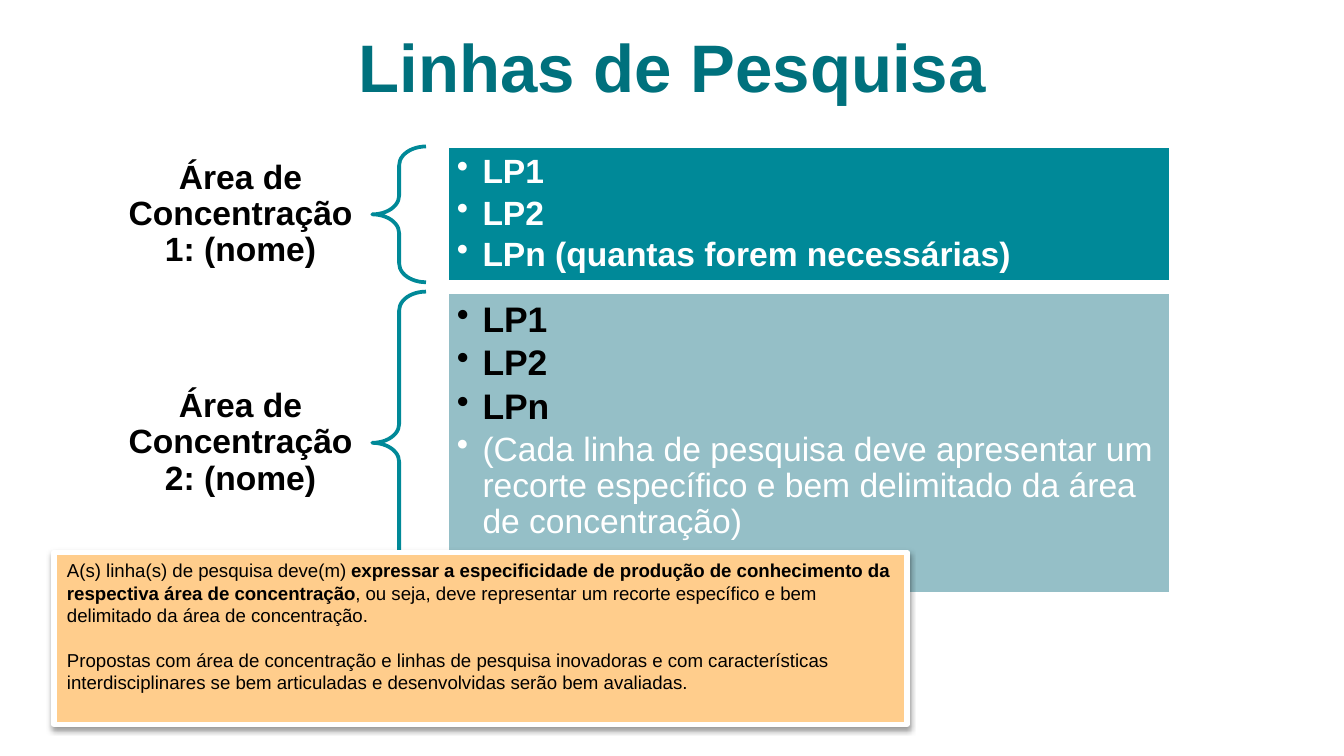
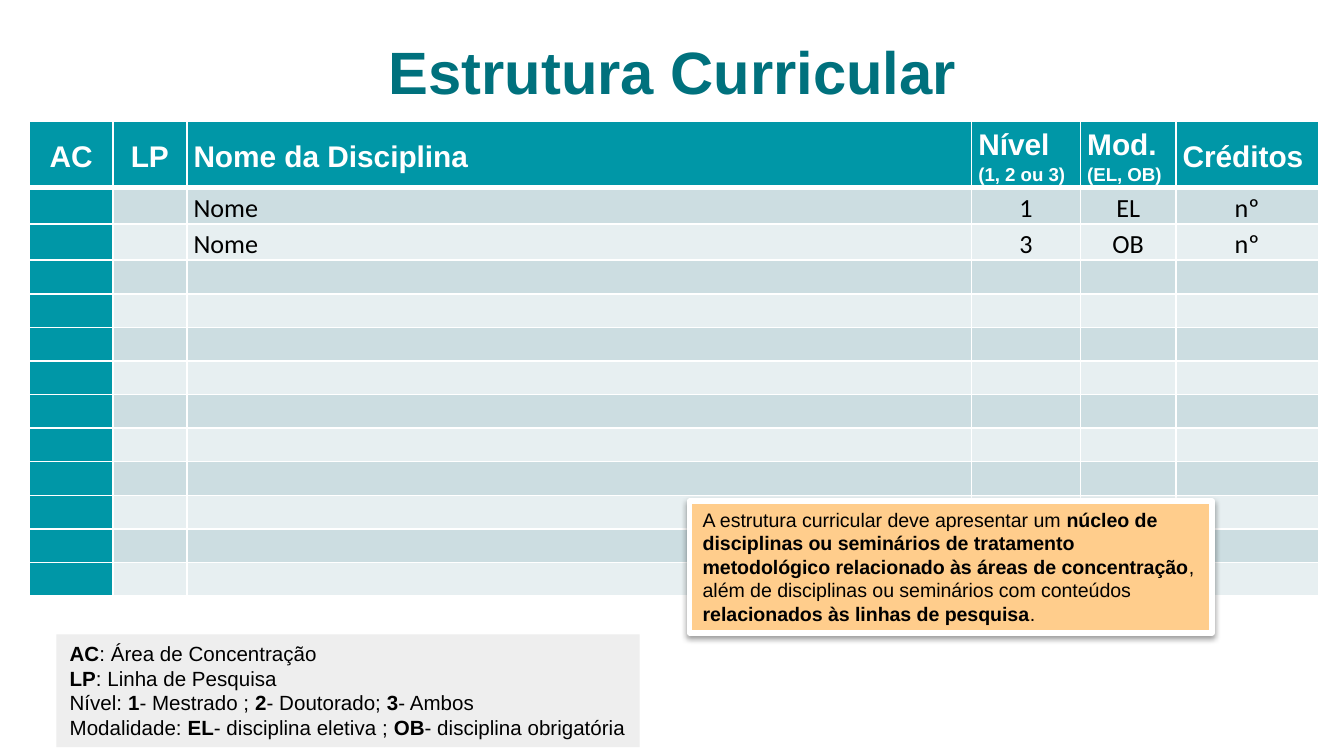
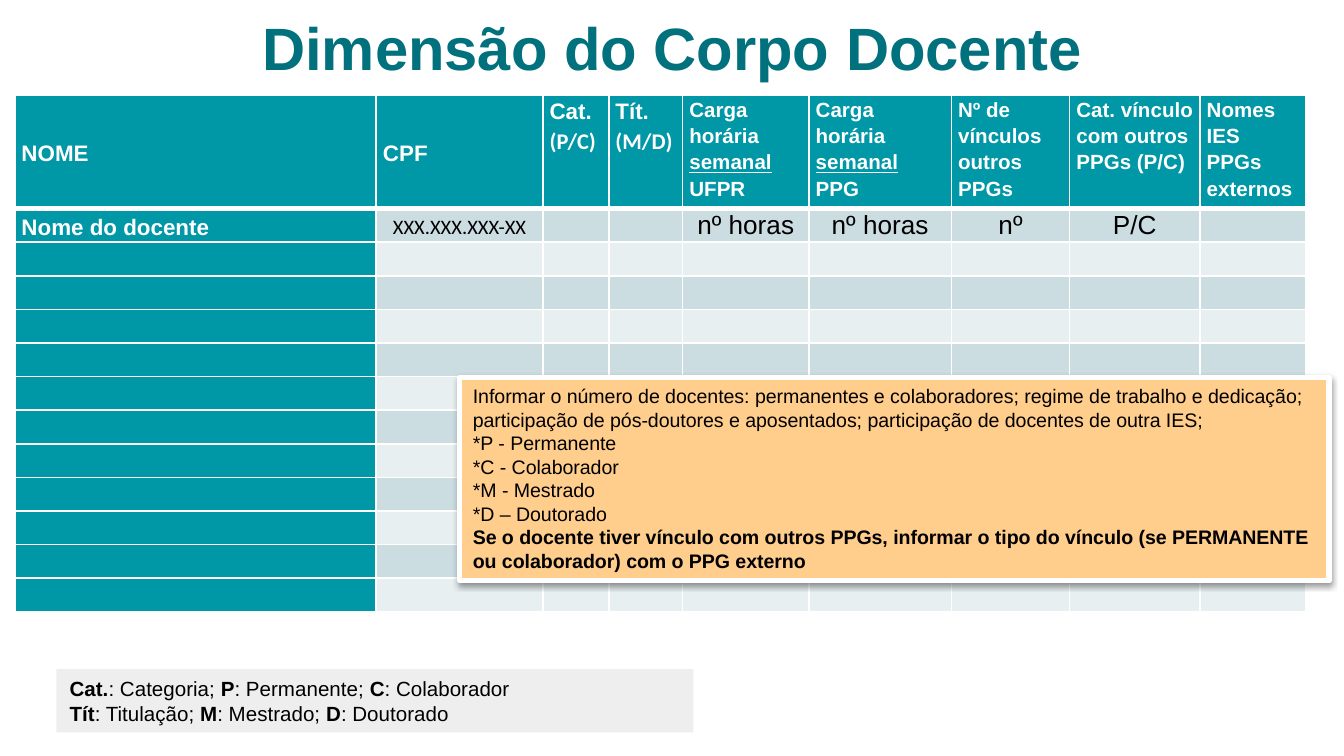
from lxml.etree import SubElement
from pptx import Presentation
from pptx.dml.color import RGBColor as RGB
from pptx.enum.shapes import MSO_SHAPE as SHAPE
from pptx.enum.text import MSO_ANCHOR as ANCHOR, PP_ALIGN as ALIGN
from pptx.oxml.ns import qn
from pptx.util import Emu, Inches, Pt

COLORS = {
    "title": "00717D", "teal": "008998", "mist": "95BFC7", "head": "0097A7",
    "band0": "CCDDE1", "band1": "E7EFF1", "note": "FFCD8C", "legend": "EEEEEE",
    "white": "FFFFFF", "black": "000000",
}
BASE = {"name": "Arial", "size": 11, "bold": False, "color": "black"}
BOLD = {"bold": True}
GRID = 100  # square grid units across the slide width
PAD = (1, 0.5, 1, 0.5)


def rgb(name):
    return RGB.from_string(COLORS[name])


class Deck:
    """Shared style and the current slide; lengths are in grid units."""

    def __init__(self):
        self.prs = Presentation()
        self.prs.slide_width, self.prs.slide_height = Inches(10), Inches(5.625)
        self.unit = self.prs.slide_width / GRID
        self.s = None

    def length(self, n):
        return Emu(round(n * self.unit))

    def box(self, at):
        return [self.length(n) for n in at]

    def slide(self):
        self.s = self.prs.slides.add_slide(self.prs.slide_layouts[6])

    # Text: pieces between bars take the emphasis format
    def fill_text(self, tf, paras, align=ALIGN.LEFT, spacing=None, after=0, gap=0,
                  bullet=False, emph=BOLD, **fmt):
        for i, para in enumerate([paras] if isinstance(paras, str) else paras):
            text, own = (para, {}) if isinstance(para, str) else para
            p = tf.paragraphs[0] if i == 0 else tf.add_paragraph()
            if bullet:
                pPr = p._p.get_or_add_pPr()
                pPr.set("marL", str(Inches(0.19)))
                pPr.set("indent", str(-Inches(0.19)))
                SubElement(pPr, qn("a:buChar")).set("char", "•")
            p.alignment, p.space_after = align, Pt(after)
            p.space_before = Pt(gap if i else 0)
            if spacing:
                p.line_spacing = spacing
            for j, piece in enumerate(text.split("|")):
                style = {**BASE, **fmt, **own, **(emph if j % 2 else {})}
                if not piece:
                    continue
                r = p.add_run()
                r.text = piece
                r.font.color.rgb = rgb(style.pop("color"))
                style["size"] = Pt(style["size"])
                for key, value in style.items():
                    setattr(r.font, key, value)

    def frame(self, tf, paras, pad=PAD, anchor=ANCHOR.TOP, **fmt):
        tf.word_wrap, tf.vertical_anchor = True, anchor
        for side, n in zip(("left", "top", "right", "bottom"), pad):
            setattr(tf, "margin_" + side, self.length(n))
        self.fill_text(tf, paras, **fmt)

    def text(self, at, paras, **fmt):
        self.frame(self.s.shapes.add_textbox(*self.box(at)).text_frame, paras, **fmt)

    def title(self, text, top=3.1, size=32):
        self.text((2.9, top, 94.3, 5.8), text, pad=(1,) * 4, anchor=ANCHOR.BOTTOM,
                  align=ALIGN.CENTER, size=size, bold=True, color="title")

    # Shapes
    def shape(self, kind, at, fill=None, line=None, width=2):
        sp = self.s.shapes.add_shape(kind, *self.box(at))
        sp.shadow.inherit = False
        for part, color in ((sp.fill, fill), (sp.line.fill, line)):
            if color:
                part.solid()
                part.fore_color.rgb = rgb(color)
            else:
                part.background()
        if line:
            sp.line.width = Pt(width)
        return sp

    def panel(self, at, fill, paras, line=None, width=2, **fmt):
        sp = self.shape(SHAPE.RECTANGLE, at, fill, line, width)
        self.frame(sp.text_frame, paras, **fmt)
        return sp

    def legend(self, at, paras):
        self.panel(at, "legend", paras)

    def note(self, at, paras, size=10.5, **fmt):
        sp = self.panel(at, "note", paras, "white", 3, size=size, **fmt)
        effects = sp._element.spPr.find(qn("a:effectLst"))
        shadow = SubElement(effects, qn("a:outerShdw"), blurRad=str(Pt(3.1)),
                            dist=str(Pt(1.6)), dir="5400000", rotWithShape="0")
        color = SubElement(shadow, qn("a:srgbClr"), val=COLORS["black"])
        SubElement(color, qn("a:alpha"), val="38000")

    def brace(self, at):
        sp = self.shape(SHAPE.LEFT_BRACE, at, line="teal")
        sp.adjustments[0], sp.adjustments[1] = 0.35, 0.5

    # Tables: one header row, one sample row per entry, then blank rows
    def borders(self, cell, row):
        tcPr = cell._tc.get_or_add_tcPr()
        widths = {"lnL": 1, "lnR": 1, "lnT": 3 if row == 1 else 1,
                  "lnB": 3 if row == 0 else 1}
        for i, (tag, width) in enumerate(widths.items()):
            ln = SubElement(tcPr, qn("a:" + tag), w=str(Pt(width)))
            fill = SubElement(ln, qn("a:solidFill"))
            SubElement(fill, qn("a:srgbClr"), val=COLORS["white"])
            tcPr.insert(i, ln)

    def table(self, left, top, cols, head_height, rows, blank_rows):
        rows = rows + [[""] * len(cols)] * blank_rows
        heights = [head_height] + [2.5] * (len(rows) - 1)
        tbl = self.s.shapes.add_table(len(rows), len(cols), *self.box(
            (left, top, sum(cols), sum(heights)))).table
        tbl.horz_banding = False
        for col, width in zip(tbl.columns, cols):
            col.width = self.length(width)
        for i, (row, height) in enumerate(zip(rows, heights)):
            tbl.rows[i].height = self.length(height)
            for j, spec in enumerate(row):
                paras, own = spec if isinstance(spec, tuple) else (spec, {})
                fmt = {"anchor": ANCHOR.MIDDLE, "spacing": 1.15, **own}
                cell = tbl.cell(i, j)
                cell.vertical_anchor = fmt.pop("anchor")
                cell.margin_left = cell.margin_right = self.length(0.5)
                cell.margin_top = cell.margin_bottom = 0
                cell.fill.solid()
                cell.fill.fore_color.rgb = rgb(
                    "head" if i == 0 or j == 0 else f"band{(i - 1) % 2}")
                self.borders(cell, i)
                if paras:
                    self.fill_text(cell.text_frame, paras, **fmt)
                else:
                    SubElement(cell.text_frame.paragraphs[0]._p,
                               qn("a:endParaRPr"), sz="1000")


def research_lines(d):
    d.slide()
    d.title("Linhas de Pesquisa", size=36)
    white = {"size": 18, "bold": False, "color": "white"}
    areas = [
        (10.9, 10.1, "teal", 0.7, {"size": 18, "color": "white"},
         ["LP1", "LP2", "LPn (quantas forem necessárias)"]),
        (21.7, 22.5, "mist", 3.9, {"size": 19},
         ["LP1", "LP2", "LPn",
          ("(Cada linha de pesquisa deve apresentar um recorte específico e bem "
           "delimitado da área de concentração)", white)]),
    ]
    for n, (top, height, fill, bottom, fmt, items) in enumerate(areas, 1):
        d.text((8, top + height / 2 - 4.4, 19.8, 8.8),
               f"Área de Concentração {n}: (nome)", pad=(1.4, 0.5, 1.4, 0.5),
               anchor=ANCHOR.MIDDLE, align=ALIGN.CENTER, spacing=0.9, size=18, bold=True)
        d.brace((27.7, top, 4, height))
        d.panel((33.3, top, 53.8, height), fill, items, "white",
                pad=(0.7, 0.7, 0.7, bottom), anchor=ANCHOR.MIDDLE, bullet=True,
                spacing=0.9, after=2.8, bold=True, **fmt)
    d.note((4, 41.1, 63.5, 12.8), [
        "A(s) linha(s) de pesquisa deve(m) |expressar a especificidade de produção de "
        "conhecimento da respectiva área de concentração|, ou seja, deve representar um "
        "recorte específico e bem delimitado da área de concentração.",
        "Propostas com área de concentração e linhas de pesquisa inovadoras e com "
        "características interdisciplinares se bem articuladas e desenvolvidas serão "
        "bem avaliadas."], size=10, gap=12)


def curriculum(d):
    d.slide()
    d.title("Estrutura Curricular")
    head = {"size": 16, "bold": True, "color": "white", "emph": {"size": 10}}
    head_mid = {**head, "align": ALIGN.CENTER}
    body = {"name": "Calibri", "size": 14}
    body_mid = {**body, "align": ALIGN.CENTER}
    header = [("AC", head_mid), ("LP", head_mid)] + [(t, head) for t in (
        "Nome da Disciplina", "Nível |(1, 2 ou 3)", "Mod. |(EL, OB)", "Créditos")]
    courses = [["", "", ("Nome", body)] + [(t, body_mid) for t in (level, kind, "nº")]
               for level, kind in (("1", "EL"), ("3", "OB"))]
    d.table(2.2, 9, [6.2, 5.5, 58.4, 8.1, 7.1, 10.6], 4, [header] + courses, 10)
    d.legend((4.2, 47.2, 43.4, 8.4), [
        "|AC|: Área de Concentração",
        "|LP|: Linha de Pesquisa",
        "Nível: |1|- Mestrado ; |2|- Doutorado; |3|- Ambos",
        "Modalidade: |EL|- disciplina eletiva ; |OB|- disciplina obrigatória"])
    d.note((51.3, 37.3, 38.9, 9.8),
           "A estrutura curricular deve apresentar um |núcleo de disciplinas ou seminários "
           "de tratamento metodológico relacionado às áreas de concentração|, além de "
           "disciplinas ou seminários com conteúdos |relacionados às linhas de pesquisa|.")


def faculty(d):
    d.slide()
    head = {"size": 12, "bold": True, "color": "white"}
    head_top = {**head, "anchor": ANCHOR.TOP}
    small = {**head_top, "size": 11, "emph": {"underline": True}}
    calibri = {"name": "Calibri"}
    value = {"size": 14, "align": ALIGN.CENTER, "spacing": None}
    header = [("NOME", head), ("CPF", head),
              (["Cat.", ("(P/C)", calibri)], head_top),
              (["Tít.", ("(M/D)", calibri)], head_top)]
    header += [(t, small) for t in (
        "Carga horária |semanal| UFPR", "Carga horária |semanal| PPG",
        "Nº de vínculos outros PPGs", "Cat. vínculo com outros PPGs (P/C)",
        "Nomes IES PPGs externos")]
    person = [("Nome do docente", head),
              ("XXX.XXX.XXX-XX", {**calibri, "align": ALIGN.CENTER}), "", ""]
    person += [(t, value) for t in ("nº horas", "nº horas", "nº", "P/C")] + [""]
    d.table(1.1, 7.1, [26.9, 12.4, 4.9, 5.5, 9.4, 10.6, 8.8, 9.7, 7.9], 7.7,
            [header, person], 11)
    d.title("Dimensão do Corpo Docente", top=1.3)
    d.note((34.2, 28.1, 64.7, 15.1), [
        "Informar o número de docentes: permanentes e colaboradores; regime de trabalho e "
        "dedicação; participação de pós-doutores e aposentados; participação de docentes "
        "de outra IES;",
        "*P - Permanente", "*C - Colaborador", "*M - Mestrado", "*D – Doutorado",
        "|Se o docente tiver vínculo com outros PPGs, informar o tipo do vínculo (se "
        "PERMANENTE ou colaborador) com o PPG externo|"])
    d.legend((4.2, 49.8, 47.4, 4.7), [
        "|Cat.|: Categoria; |P|: Permanente; |C|: Colaborador",
        "|Tít|: Titulação; |M|: Mestrado; |D|: Doutorado"])


def main():
    d = Deck()
    for build in (research_lines, curriculum, faculty):
        build(d)
    d.prs.save("out.pptx")


if __name__ == "__main__":
    main()
